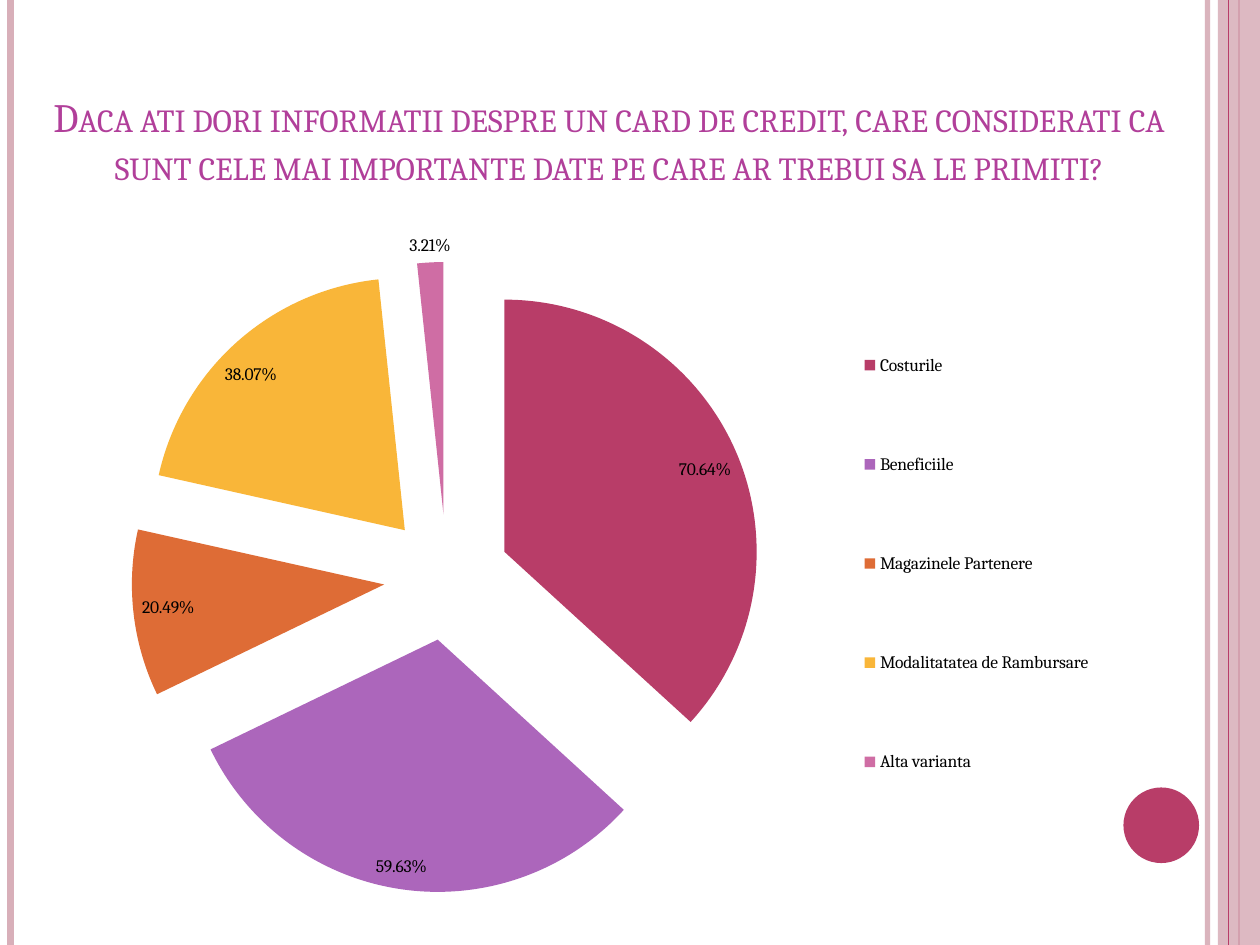
from dataclasses import dataclass
from typing import Optional

import pptx
import pptx.chart.data
import pptx.dml.color
import pptx.enum.chart
import pptx.enum.shapes
import pptx.enum.text
import pptx.oxml
import pptx.oxml.ns
import pptx.util
from pptx.util import Pt

RGBColor = pptx.dml.color.RGBColor
WHITE = RGBColor(0xFF, 0xFF, 0xFF)
BLACK = RGBColor(0x00, 0x00, 0x00)
ROSE = RGBColor(0xD8, 0xAF, 0xB9)
CRIMSON = RGBColor(0xB8, 0x3D, 0x68)
VIOLET = RGBColor(0xAC, 0x66, 0xBB)
ORANGE = RGBColor(0xDE, 0x6C, 0x36)
AMBER = RGBColor(0xF9, 0xB6, 0x39)
PINK = RGBColor(0xCF, 0x6D, 0xA4)
MAGENTA = RGBColor(0xB1, 0x3F, 0x9A)
FONT = "Cambria"
WIDTH, HEIGHT = 720, 540
TITLE = (
    "Daca ati dori informatii despre un card de credit, care considerati ca "
    "sunt cele mai importante date pe care ar trebui sa le primiti?"
)


@dataclass(frozen=True)
class Stripe:
    x: float
    weight: float
    color: RGBColor
    opacity: Optional[int] = None


@dataclass(frozen=True)
class Block:
    kind: int
    left: float
    top: float
    width: float
    height: float
    color: RGBColor
    opacity: Optional[int] = None


@dataclass(frozen=True)
class Answer:
    label: str
    share: float
    color: RGBColor


@dataclass(frozen=True)
class Layout:
    x: float
    y: float
    w: float
    h: float


SHAPES = pptx.enum.shapes.MSO_SHAPE
DECORATION = [
    Stripe(690, 3, ROSE, 93),
    Stripe(6, 4.5, ROSE),
    Stripe(708, 1.5, CRIMSON),
    Block(SHAPES.RECTANGLE, 696, 0, 24, HEIGHT, ROSE, 87),
    Stripe(702, 0.75, CRIMSON),
    Block(SHAPES.OVAL, 642, 450, 43.2, 43.2, CRIMSON),
]
ANSWERS = [
    Answer("Costurile", 0.7064, CRIMSON),
    Answer("Beneficiile", 0.5963, VIOLET),
    Answer("Magazinele Partenere", 0.2049, ORANGE),
    Answer("Modalitatatea de Rambursare", 0.3807, AMBER),
    Answer("Alta varianta", 0.0321, PINK),
]
PIE_LAYOUT = Layout(0.1, 0.06, 0.58, 0.91)
LEGEND_LAYOUT = Layout(0.76, 0.08, 0.23, 0.83)


def set_opacity(element, percent: Optional[int]) -> None:
    if percent is not None:
        color = element.find(".//" + pptx.oxml.ns.qn("a:srgbClr"))
        alpha = color.makeelement(pptx.oxml.ns.qn("a:alpha"), {"val": str(percent * 1000)})
        color.append(alpha)


def draw_stripe(page, stripe: Stripe) -> None:
    line = page.shapes.add_connector(
        pptx.enum.shapes.MSO_CONNECTOR.STRAIGHT,
        Pt(stripe.x), Pt(0), Pt(stripe.x), Pt(HEIGHT),
    )
    line.line.width = Pt(stripe.weight)
    line.line.color.rgb = stripe.color
    set_opacity(line._element.spPr, stripe.opacity)
    properties = line._element.spPr
    properties.append(properties.makeelement(pptx.oxml.ns.qn("a:effectLst"), {}))


def draw_block(page, block: Block) -> None:
    shape = page.shapes.add_shape(
        block.kind, Pt(block.left), Pt(block.top), Pt(block.width), Pt(block.height)
    )
    shape.shadow.inherit = False
    shape.fill.solid()
    shape.fill.fore_color.rgb = block.color
    shape.line.fill.background()
    set_opacity(shape._element.spPr, block.opacity)


def write_title(page) -> None:
    title = page.shapes.title
    title.left, title.top, title.width, title.height = Pt(12), Pt(21.6), Pt(672), Pt(90)
    frame = title.text_frame
    frame.text = TITLE
    frame.word_wrap = True
    frame.auto_size = pptx.enum.text.MSO_AUTO_SIZE.NONE
    frame.vertical_anchor = pptx.enum.text.MSO_ANCHOR.BOTTOM
    para = frame.paragraphs[0]
    para.alignment = pptx.enum.text.PP_ALIGN.CENTER
    span = para.runs[0]
    span.font.name = FONT
    span.font.size = Pt(23)
    span.font.color.rgb = MAGENTA
    span.font._element.set("cap", "small")


def layout_element(layout: Layout, inner: bool = False):
    target = '<c:layoutTarget val="inner"/>' if inner else ""
    return pptx.oxml.parse_xml(
        f'<c:layout {pptx.oxml.ns.nsdecls("c")}><c:manualLayout>{target}'
        '<c:xMode val="edge"/><c:yMode val="edge"/>'
        f'<c:x val="{layout.x}"/><c:y val="{layout.y}"/>'
        f'<c:w val="{layout.w}"/><c:h val="{layout.h}"/>'
        "</c:manualLayout></c:layout>"
    )


def draw_pie(page) -> None:
    data = pptx.chart.data.CategoryChartData(number_format="0.00%")
    data.categories = [answer.label for answer in ANSWERS]
    data.add_series("Series 1", [answer.share for answer in ANSWERS])
    chart = page.shapes.add_chart(
        pptx.enum.chart.XL_CHART_TYPE.PIE, Pt(12), Pt(126), Pt(624), Pt(396), data
    ).chart
    chart.has_title = False
    chart.font.name = FONT
    chart.font.size = Pt(10)
    chart.font.color.rgb = BLACK
    chart.has_legend = True
    chart.legend.position = pptx.enum.chart.XL_LEGEND_POSITION.RIGHT
    chart.legend.include_in_layout = False

    plot = chart.plots[0]
    plot.vary_by_categories = True
    series = plot.series[0]
    for index, answer in enumerate(ANSWERS):
        fill = series.points[index].format.fill
        fill.solid()
        fill.fore_color.rgb = answer.color
    labels = series.data_labels
    labels.show_value = True
    labels.show_percentage = False
    labels.number_format = "0.00%"
    labels.number_format_is_linked = False
    labels.position = pptx.enum.chart.XL_LABEL_POSITION.BEST_FIT

    qn = pptx.oxml.ns.qn
    first_point = series._element.find(qn("c:dPt"))
    first_point.addprevious(first_point.makeelement(qn("c:explosion"), {"val": "25"}))
    plot_area = chart._chartSpace.chart.plotArea
    legend = chart.legend._element
    for parent in (plot_area, legend):
        for previous in parent.findall(qn("c:layout")):
            parent.remove(previous)
    plot_area.insert(0, layout_element(PIE_LAYOUT, inner=True))
    legend.find(qn("c:legendPos")).addnext(layout_element(LEGEND_LAYOUT))


def main() -> None:
    deck = pptx.Presentation()
    deck.slide_width, deck.slide_height = Pt(WIDTH), Pt(HEIGHT)
    page = deck.slides.add_slide(deck.slide_layouts[5])
    page.background.fill.solid()
    page.background.fill.fore_color.rgb = WHITE
    for item in DECORATION:
        if isinstance(item, Stripe):
            draw_stripe(page, item)
        else:
            draw_block(page, item)
    write_title(page)
    draw_pie(page)
    deck.save("out.pptx")


if __name__ == "__main__":
    main()
